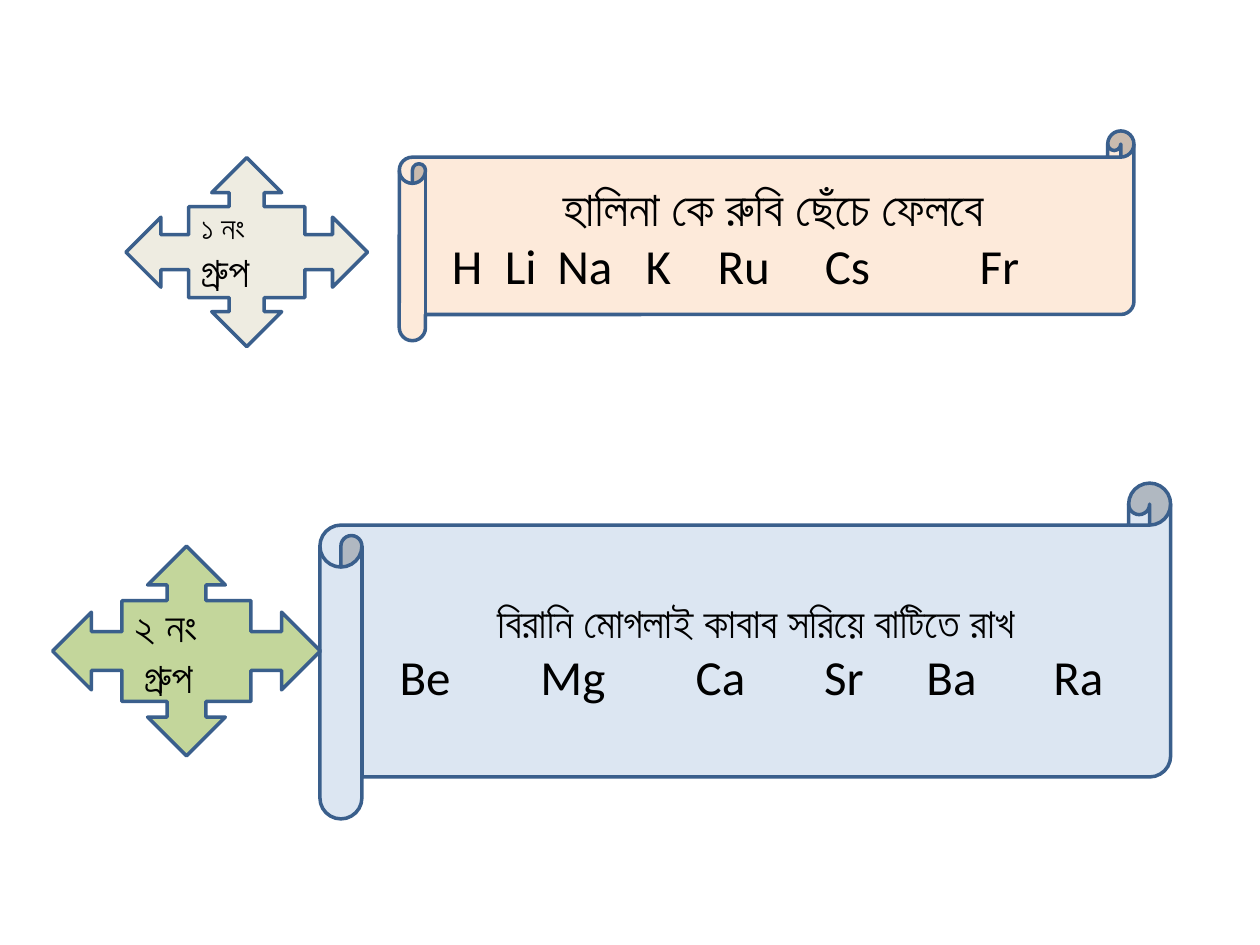
from lxml import etree
from pptx import Presentation
from pptx.dml.color import RGBColor
from pptx.enum.shapes import MSO_SHAPE
from pptx.enum.text import MSO_ANCHOR, PP_ALIGN
from pptx.oxml.ns import qn
from pptx.util import Cm, Pt

SCROLL, CALLOUT = MSO_SHAPE.HORIZONTAL_SCROLL, MSO_SHAPE.QUAD_ARROW_CALLOUT
LEFT, CENTER, MIDDLE = PP_ALIGN.LEFT, PP_ALIGN.CENTER, MSO_ANCHOR.MIDDLE
BLACK = RGBColor(0x00, 0x00, 0x00)
OUTLINE = RGBColor(0x3A, 0x5F, 0x8C)
PEACH = RGBColor(0xFD, 0xEA, 0xDA)
CREAM = RGBColor(0xEE, 0xEC, 0xE1)
PALE_BLUE = RGBColor(0xDC, 0xE6, 0xF2)
GREEN = RGBColor(0xC3, 0xD6, 0x9B)


def add_box(kind, place, fill):
    box = slide.shapes.add_shape(kind, *[Cm(length) for length in place])
    box.shadow.inherit = False
    box.fill.solid()
    box.fill.fore_color.rgb = fill
    box.line.color.rgb = OUTLINE
    box.line.width = Pt(2)
    box.text_frame.word_wrap = True
    box.text_frame.vertical_anchor = MIDDLE
    return box


def add_span(para, text, size, font="Calibri"):
    span = para.add_run()
    span.text = text
    span.font.size = Pt(size)
    span.font.name = font
    span.font.color.rgb = BLACK


deck = Presentation()
deck.slide_width, deck.slide_height = Cm(25.4), Cm(19.05)
slide = deck.slides.add_slide(deck.slide_layouts[6])

# Each group: scroll place and fill, mnemonic and size, elements with tab stops,
# then callout place and fill, number and size, hanging indent
groups = [
    ((8.05, 2.64, 14.81, 4.23), PEACH, "হালিনা কে রুবি ছেঁচে ফেলবে", 28,
     {"H": 0.28, "Li": 1.35, "Na": 2.41, "K": 4.19, "Ru": 5.64, "Cs": 7.8, "Fr": 10.92},
     (2.54, 3.18, 4.87, 3.81), CREAM, "১ নং ", 18, 0),
    ((6.45, 9.74, 17.15, 6.77), PALE_BLUE, "বিরানি মোগলাই কাবাব সরিয়ে বাটিতে রাখ", 24,
     {"Be": 0.51, "Mg": 3.35, "Ca": 6.48, "Sr": 9.07, "Ba": 11.13, "Ra": 13.69},
     (1.06, 11.01, 5.4, 4.23), GREEN, "২ নং ", 24, 0.2),
]

for (scroll_place, scroll_fill, mnemonic, mnemonic_size, elements,
     callout_place, callout_fill, number, number_size, hanging) in groups:
    # Scroll with the mnemonic above its elements
    frame = add_box(SCROLL, scroll_place, scroll_fill).text_frame
    para = frame.paragraphs[0]
    para.alignment = CENTER
    add_span(para, mnemonic, mnemonic_size)

    para = frame.add_paragraph()
    para.alignment = LEFT
    add_span(para, "".join("\t" + symbol for symbol in elements), 28)
    tabs = etree.SubElement(para._p.get_or_add_pPr(), qn("a:tabLst"))
    for stop in elements.values():
        etree.SubElement(tabs, qn("a:tab"), pos=str(Cm(stop)), algn="l")

    # Callout naming the group
    para = add_box(CALLOUT, callout_place, callout_fill).text_frame.paragraphs[0]
    para.alignment = LEFT
    properties = para._p.get_or_add_pPr()
    properties.set("marL", str(Cm(hanging)))
    properties.set("indent", str(-Cm(hanging)))
    add_span(para, number, number_size)
    add_span(para, "গ্রুপ", 24, "Lato")

deck.save("out.pptx")
